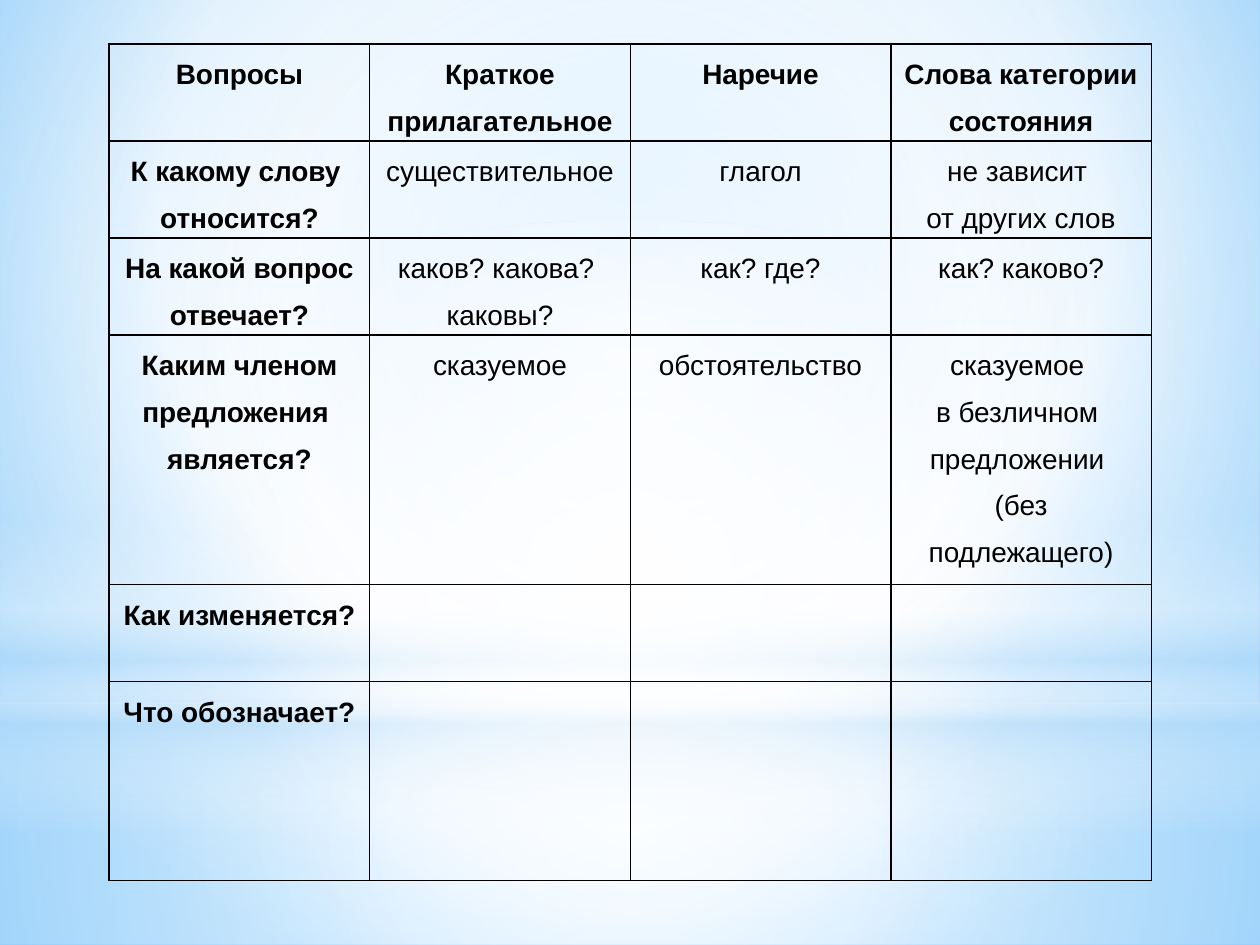
from pptx import Presentation
from pptx.util import Pt
from pptx.dml.color import RGBColor
from pptx.enum.shapes import MSO_SHAPE as SHAPE
from pptx.enum.text import PP_ALIGN as ALIGN
from pptx.oxml import parse_xml
from pptx.oxml.ns import nsdecls, qn

BLACK = "000000"
CENTER = (50, 50, 50, 50)


def color(value):
    return RGBColor.from_string(value)


def set_gradient(fill, element, stops, rect=None):
    fill.solid()
    gs = "".join(
        f'<a:gs pos="{pos * 1000}"><a:srgbClr val="{rgb}">'
        f'<a:alpha val="{alpha * 1000}"/></a:srgbClr></a:gs>'
        for pos, rgb, alpha in stops
    )
    if rect:
        sides = " ".join(f'{k}="{v * 1000}"' for k, v in zip("ltrb", rect))
        shade = f'<a:path path="circle"><a:fillToRect {sides}/></a:path>'
    else:
        shade = '<a:lin ang="5400000" scaled="0"/>'
    solid = next(element.iter(qn("a:solidFill")))
    solid.getparent().replace(solid, parse_xml(
        f'<a:gradFill {nsdecls("a")} rotWithShape="1">'
        f"<a:gsLst>{gs}</a:gsLst>{shade}</a:gradFill>"
    ))


prs = Presentation()
prs.slide_width, prs.slide_height = Pt(720), Pt(540)
s = prs.slides.add_slide(prs.slide_layouts[6])
set_gradient(
    s.background.fill, s._element,
    [(0, "9ED5FF", 100), (60, "FFFFFF", 100), (100, "5BB9FF", 100)],
    (20, 10, 20, 60),
)

glows = [
    (SHAPE.RECTANGLE, 401.76, 138.24, CENTER,
     [(0, "FFFFFF", 91), (37, "FFFFFF", 76), (100, "B4DCFA", 79)]),
    (SHAPE.RECTANGLE, 0, 401.76, CENTER,
     [(0, "FFFFFF", 89), (48, "FFFFFF", 62), (100, "B4DCFA", 79)]),
    (SHAPE.RECTANGLE, 296.64, 180, None,
     [(0, "FFFFFF", 0), (29, "FFFFFF", 30), (45, "B4DCFA", 40),
      (55, "FFFFFF", 26), (65, "B4DCFA", 60), (100, "FFFFFF", 0)]),
    (SHAPE.OVAL, 126, 401.76, CENTER,
     [(0, "FFFFFF", 100), (56, "FFFFFF", 0)]),
]
for kind, top, height, rect, stops in glows:
    sp = s.shapes.add_shape(kind, 0, Pt(top), prs.slide_width, Pt(height))
    sp.shadow.inherit = False
    sp.line.fill.background()
    set_gradient(sp.fill, sp._element.spPr, stops, rect)

rows = [
    ["Вопросы", "Краткое\nприлагательное", "Наречие", "Слова категории состояния"],
    ["К какому слову \nотносится?", "существительное", "глагол",
     "не зависит \nот других слов"],
    ["На какой вопрос отвечает?", "каков? какова? \nкаковы?", "как? где?",
     "как? каково?"],
    ["Каким членом предложения \nявляется?", "сказуемое", "обстоятельство",
     "сказуемое \nв безличном \nпредложении \n(без подлежащего)"],
    ["Как изменяется?", "", "", ""],
    ["Что обозначает?", "", "", ""],
]
heights = [55.44, 55.44, 55.44, 142.56, 55.44, 113.76]
cell_format = {"margin_left": Pt(4.5), "margin_right": Pt(4.5),
               "margin_top": 0, "margin_bottom": 0}
para_format = {"alignment": ALIGN.CENTER, "line_spacing": 1.5}
font_format = {"name": "Arial", "size": Pt(16)}

table = s.shapes.add_table(
    len(rows), 4, Pt(62.4), Pt(25.2), Pt(595.6), Pt(sum(heights))
).table
table.first_row = table.horz_banding = False
for column in table.columns:
    column.width = Pt(148.9)
for i, (texts, height) in enumerate(zip(rows, heights)):
    table.rows[i].height = Pt(height)
    for j, text in enumerate(texts):
        cell = table.cell(i, j)
        for name, value in cell_format.items():
            setattr(cell, name, value)
        cell.fill.background()
        tcPr = cell._tc.get_or_add_tcPr()
        for k, side in enumerate("LRTB"):
            tcPr.insert(k, parse_xml(
                f'<a:ln{side} {nsdecls("a")} w="{Pt(1)}"><a:solidFill>'
                f'<a:srgbClr val="{BLACK}"/></a:solidFill></a:ln{side}>'
            ))
        if not text:
            continue
        cell.text = text
        for p in cell.text_frame.paragraphs:
            for name, value in para_format.items():
                setattr(p, name, value)
            for r in p.runs:
                for name, value in font_format.items():
                    setattr(r.font, name, value)
                r.font.bold = i == 0 or j == 0
                r.font.color.rgb = color(BLACK)

prs.save("out.pptx")
